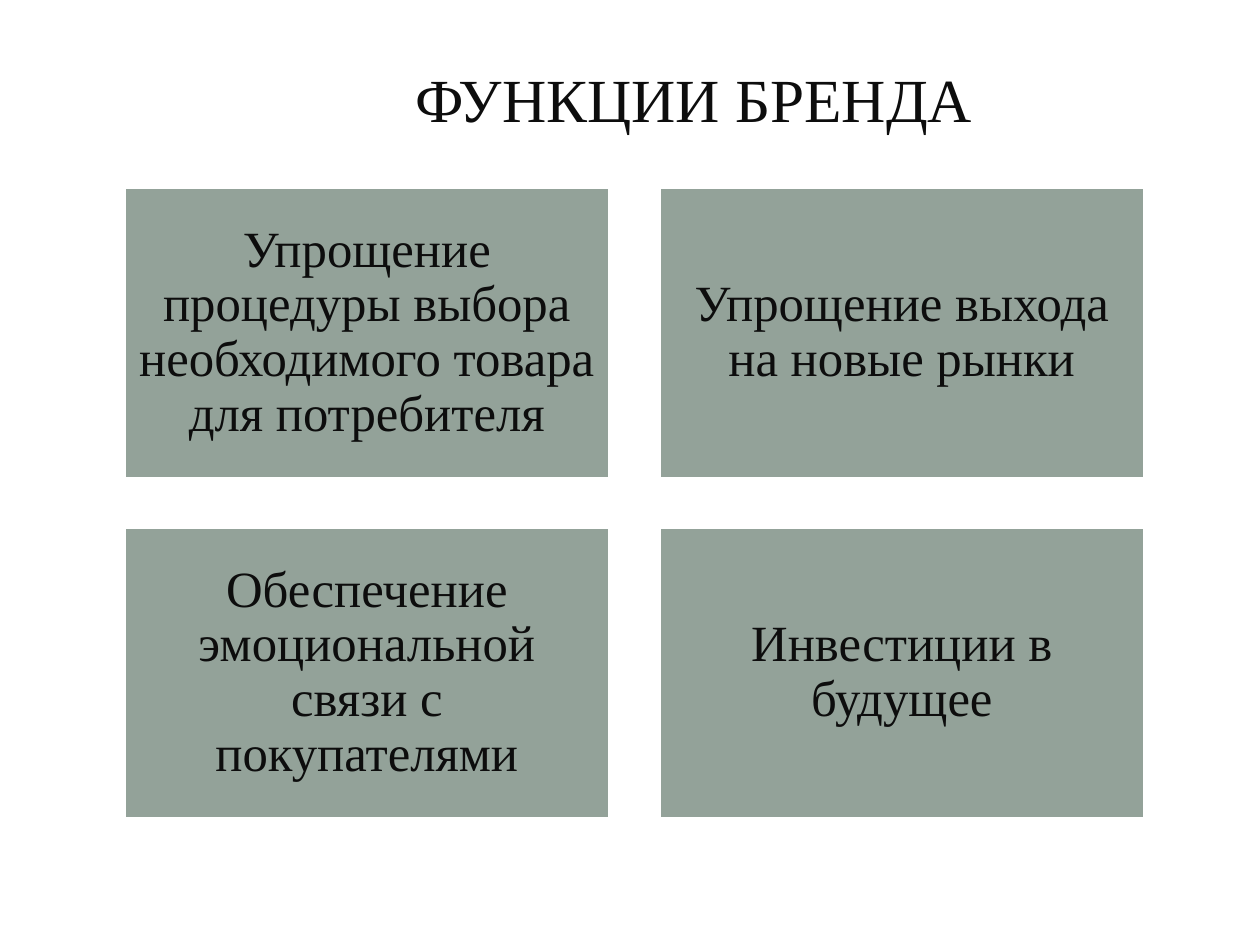
from pptx import Presentation
from pptx.dml.color import RGBColor
from pptx.enum.shapes import MSO_SHAPE as Shape
from pptx.enum.text import MSO_ANCHOR as Anchor, PP_ALIGN as Align
from pptx.util import Pt

EMU_PER_PX = 914400 // 126
FONT = "Times New Roman"
INK = RGBColor(0x0D, 0x0D, 0x0D)
SAGE = RGBColor(0x93, 0xA2, 0x99)
WHITE = RGBColor(0xFF, 0xFF, 0xFF)

TITLE = "ФУНКЦИИ БРЕНДА"
FUNCTIONS = [
    "Упрощение процедуры выбора необходимого товара для потребителя",
    "Упрощение выхода на новые рынки",
    "Обеспечение эмоциональной связи с покупателями",
    "Инвестиции в будущее",
]
COLUMNS = 2
CARD_LEFT, CARD_TOP = 124, 187
CARD_WIDTH, CARD_HEIGHT = 486, 292
GAP_X, GAP_Y = 49, 48
CARD_INSET = 14


def px(length):
    return length * EMU_PER_PX


def apply_format(target, values):
    for name, value in values.items():
        setattr(target, name, value)


def write_text(frame, text, size, line_spacing=1.0):
    frame.word_wrap = True
    paragraph = frame.paragraphs[0]
    apply_format(paragraph, {"alignment": Align.CENTER, "line_spacing": line_spacing})
    run = paragraph.add_run()
    run.text = text
    apply_format(run.font, {"name": FONT, "size": Pt(size)})
    run.font.color.rgb = INK


def add_title(slide, text):
    box = slide.shapes.add_textbox(px(312), px(55), px(764), px(87))
    write_text(box.text_frame, text, 35)


def add_card(slide, left, top, text):
    card = slide.shapes.add_shape(
        Shape.RECTANGLE, px(left), px(top), px(CARD_WIDTH), px(CARD_HEIGHT)
    )
    card.shadow.inherit = False
    card.fill.solid()
    card.fill.fore_color.rgb = SAGE
    card.line.color.rgb = WHITE
    card.line.width = Pt(2)
    sides = ("left", "top", "right", "bottom")
    margins = {f"margin_{side}": px(CARD_INSET) for side in sides}
    apply_format(card.text_frame, {"vertical_anchor": Anchor.MIDDLE, **margins})
    write_text(card.text_frame, text, 29, 0.9)


def main():
    presentation = Presentation()
    apply_format(presentation, {"slide_width": px(1260), "slide_height": px(945)})
    slide = presentation.slides.add_slide(presentation.slide_layouts[6])
    add_title(slide, TITLE)
    for index, text in enumerate(FUNCTIONS):
        row, column = divmod(index, COLUMNS)
        left = CARD_LEFT + column * (CARD_WIDTH + GAP_X)
        top = CARD_TOP + row * (CARD_HEIGHT + GAP_Y)
        add_card(slide, left, top, text)
    presentation.save("out.pptx")


if __name__ == "__main__":
    main()
